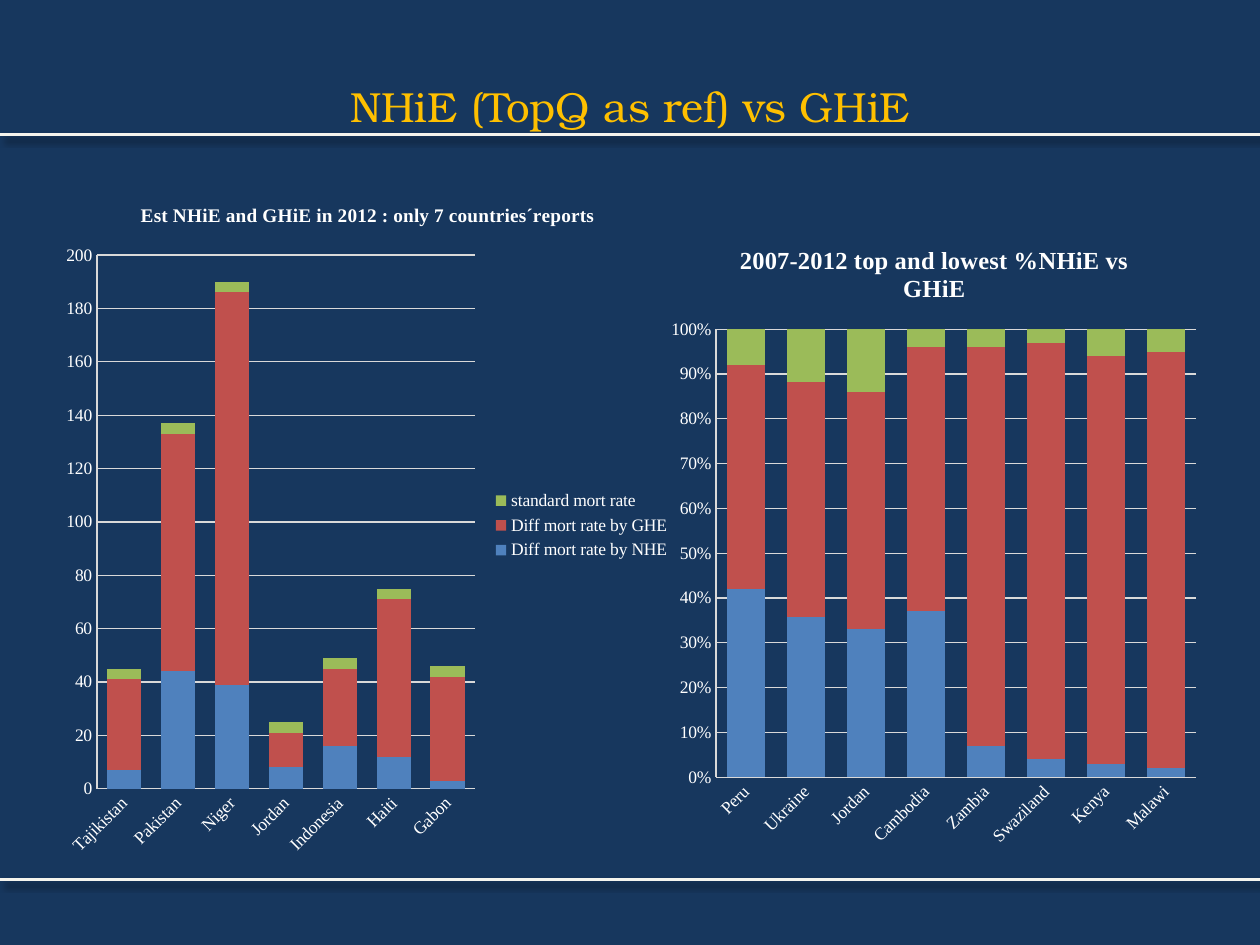
"""Build a slide comparing NHiE and GHiE in two stacked column charts."""
from lxml import etree
from pptx import Presentation
from pptx import util as u
from pptx.chart.data import CategoryChartData
from pptx.dml.color import RGBColor
from pptx.enum import chart as ch, shapes, text
from pptx.oxml import parse_xml
from pptx.oxml.ns import nsdecls, qn


def rgb(value):
    return RGBColor.from_string(value)


def style_font(font, size, bold=False):
    font.size, font.bold, font.name = u.Pt(size), bold, "Times New Roman"
    font.color.rgb = rgb("FFFFFF")


prs = Presentation()
prs.slide_width, prs.slide_height = u.Inches(10), u.Inches(7.5)
s = prs.slides.add_slide(prs.slide_layouts[5])
s.background.fill.solid()
s.background.fill.fore_color.rgb = rgb("17375E")

for y in (6.98, 1.07):
    rule = s.shapes.add_connector(shapes.MSO_CONNECTOR.STRAIGHT, u.Inches(0), u.Inches(y), u.Inches(10), u.Inches(y))
    rule.line.color.rgb = rgb("F5F4ED")
    rule.line.width = u.Pt(1.75)
    rule._element.spPr.append(parse_xml(
        f'<a:effectLst {nsdecls("a")}><a:outerShdw blurRad="50800" dist="50800" dir="2400000" algn="tl" rotWithShape="0">'
        '<a:srgbClr val="000000"><a:alpha val="40000"/></a:srgbClr></a:outerShdw></a:effectLst>'))

title = s.shapes.title
title.left, title.top, title.width, title.height = [u.Inches(v) for v in (0.5, 0.52, 9, 0.63)]
tf = title.text_frame
tf.vertical_anchor = text.MSO_ANCHOR.MIDDLE
p = tf.paragraphs[0]
p.alignment = text.PP_ALIGN.CENTER
r = p.add_run()
r.text = "NHiE (TopQ as ref) vs GHiE"
r.font.size, r.font.name = u.Pt(24), "TeX Gyre Bonum"
r.font.color.rgb = rgb("FFC000")

colors = ["4F81BD", "C0504D", "9BBB59"]
charts = [
    dict(kind=ch.XL_CHART_TYPE.COLUMN_STACKED, box=(0.42, 1.42, 5, 5.5), plot=(0.07, 0.11, 0.6, 0.77),
         title="Est NHiE and GHiE in 2012 : only 7 countries´reports", size=11,
         top=200, step=20, fmt="General", legend=True,
         cats=["Tajikistan", "Pakistan", "Niger", "Jordan", "Indonesia", "Haiti", "Gabon"],
         series={"Diff mort rate by NHE": [7, 44, 39, 8, 16, 12, 3],
                 "Diff mort rate by GHE": [34, 89, 147, 13, 29, 59, 39],
                 "standard mort rate": [4] * 7}),
    dict(kind=ch.XL_CHART_TYPE.COLUMN_STACKED_100, box=(5.25, 1.75, 4.33, 5.08), plot=(0.1, 0.17, 0.88, 0.7),
         title="2007-2012 top and lowest %NHiE vs GHiE", size=14,
         top=1, step=0.1, fmt="0%", legend=False,
         cats=["Peru", "Ukraine", "Jordan", "Cambodia", "Zambia", "Swaziland", "Kenya", "Malawi"],
         series={"Series 1": [42, 36, 33, 37, 7, 4, 3, 2],
                 "Series 2": [50, 53, 53, 59, 89, 92, 91, 93],
                 "Series 3": [8, 12, 14, 4, 4, 3, 6, 5]}),
]

for c in charts:
    data = CategoryChartData()
    data.categories = c["cats"]
    for name, values in c["series"].items():
        data.add_series(name, values)
    chart = s.shapes.add_chart(c["kind"], *[u.Inches(v) for v in c["box"]], data).chart
    style_font(chart.font, 10)

    chart.has_title = True
    r = chart.chart_title.text_frame.paragraphs[0].add_run()
    r.text = c["title"]
    style_font(r.font, c["size"], True)
    chart.chart_title.include_in_layout = False

    chart.has_legend = c["legend"]
    if c["legend"]:
        chart.legend.position = ch.XL_LEGEND_POSITION.RIGHT
        chart.legend.include_in_layout = False

    plot = chart.plots[0]
    plot.gap_width, plot.overlap, plot.vary_by_categories = 55, 100, False
    for series, color in zip(plot.series, colors):
        series.format.fill.solid()
        series.format.fill.fore_color.rgb = rgb(color)

    cat, val = chart.category_axis, chart.value_axis
    val.minimum_scale, val.maximum_scale, val.major_unit = 0, c["top"], c["step"]
    val.has_major_gridlines = True
    val.tick_labels.number_format = c["fmt"]
    val.tick_labels.number_format_is_linked = False
    for axis in (cat, val):
        axis.major_tick_mark = axis.minor_tick_mark = ch.XL_TICK_MARK.NONE
        style_font(axis.tick_labels.font, 10)
    for line in (cat.format.line, val.format.line, val.major_gridlines.format.line):
        line.color.rgb = rgb("D9D9D9")
        line.width = u.Pt(0.75)
    cat._element.find(qn("c:txPr")).find(qn("a:bodyPr")).set("rot", "-2700000")

    area = chart._chartSpace.chart.plotArea
    for old in area.findall(qn("c:layout")):
        area.remove(old)
    layout = etree.Element(qn("c:layout"))
    manual = etree.SubElement(layout, qn("c:manualLayout"))
    settings = [("layoutTarget", "inner"), ("xMode", "edge"), ("yMode", "edge"), *zip("xywh", c["plot"])]
    for tag, value in settings:
        etree.SubElement(manual, qn(f"c:{tag}")).set("val", str(value))
    area.insert(0, layout)

prs.save("out.pptx")
